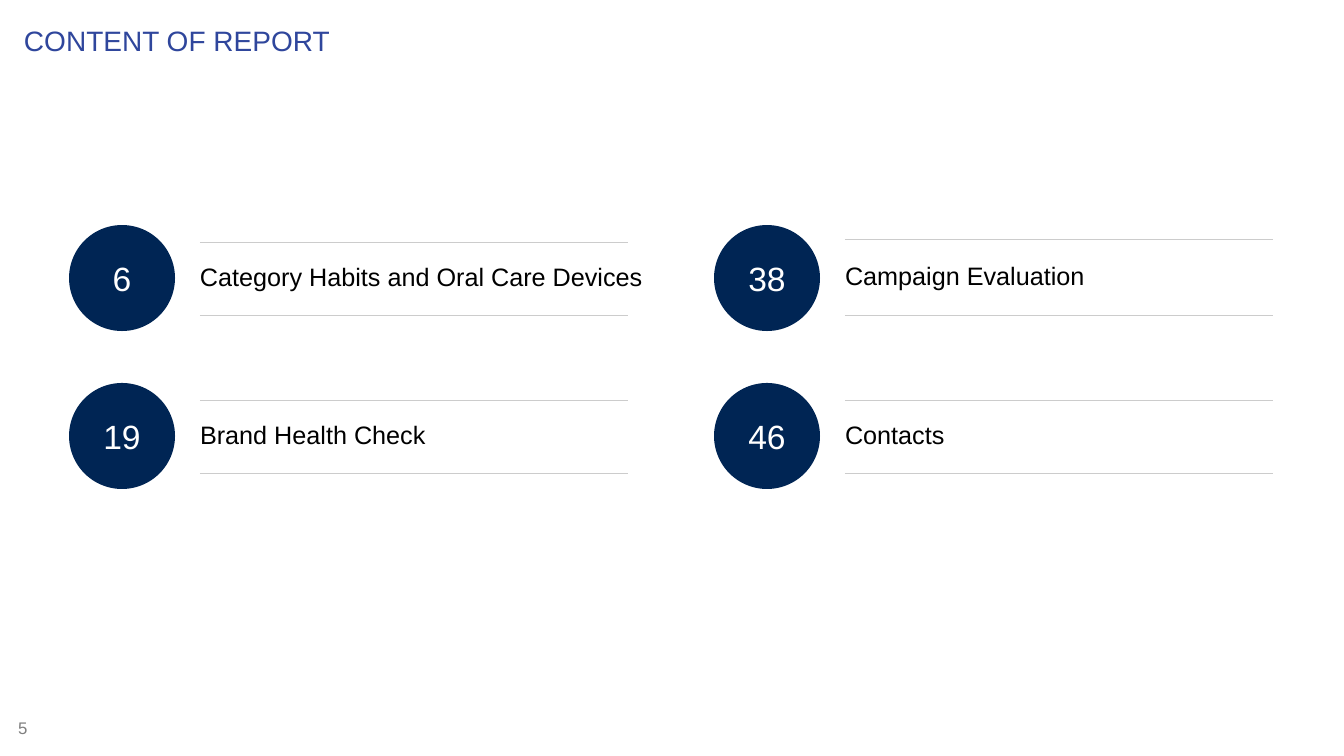
from lxml import etree
from pptx import Presentation
from pptx import util as u
from pptx.dml.color import RGBColor
from pptx.enum import shapes, text
from pptx.oxml.ns import qn


def px(length):
    return u.Inches(length / 100.8)


def color(hex_code):
    return RGBColor.from_string(hex_code)


class ReportSlide:
    """Draws the elements of a report slide in one shared style."""

    FONT = "Arial"
    NAVY, BLUE, GREY, RULE = "002554", "2F469C", "808080", "CCCCCC"
    BLACK, WHITE = "000000", "FFFFFF"

    def __init__(self, deck):
        self.slide = deck.slides.add_slide(deck.slide_layouts[6])

    def set_words(self, frame, words, size, hex_code, align=text.PP_ALIGN.LEFT):
        frame.word_wrap = True
        frame.vertical_anchor = text.MSO_ANCHOR.MIDDLE
        paragraph = frame.paragraphs[0]
        paragraph.alignment = align
        run = paragraph.add_run()
        run.text = words
        run.font.name = self.FONT
        run.font.size = u.Pt(size)
        run.font.color.rgb = color(hex_code)
        return paragraph

    def label(self, parent, box, words, size, hex_code, inset=(10, 5), spacing=1.0):
        frame = parent.shapes.add_textbox(*map(px, box)).text_frame
        frame.margin_left = frame.margin_right = px(inset[0])
        frame.margin_top = frame.margin_bottom = px(inset[1])
        self.set_words(frame, words, size, hex_code).line_spacing = spacing

    def badge(self, parent, left, top, diameter, number):
        circle = parent.shapes.add_shape(
            shapes.MSO_SHAPE.OVAL, *map(px, (left, top, diameter, diameter)))
        circle.shadow.inherit = False
        circle.fill.solid()
        circle.fill.fore_color.rgb = color(self.NAVY)
        circle.line.fill.background()
        self.set_words(circle.text_frame, number, 24, self.WHITE, text.PP_ALIGN.CENTER)

    def rule(self, parent, left, top, width):
        line = parent.shapes.add_connector(
            shapes.MSO_CONNECTOR.STRAIGHT, *map(px, (left, top, left + width, top)))
        line.line.color.rgb = color(self.RULE)
        line.line.width = u.Pt(0.5)
        etree.SubElement(line._element.spPr, qn("a:effectLst"))

    def entry(self, left, top, number, heading, label_width=428, rule_offset=17, label_offset=39):
        group = self.slide.shapes.add_group_shape()
        self.badge(group, left, top, 106, number)
        label_left = left + 131
        self.label(group, (label_left, top + label_offset, label_width, 28),
                   heading, 18, self.BLACK, inset=(0, 0), spacing=0.9)
        for offset in (rule_offset, 90):
            self.rule(group, label_left, top + offset, 428)


def main():
    deck = Presentation()
    deck.slide_width, deck.slide_height = px(1344), px(756)
    report = ReportSlide(deck)
    report.label(report.slide, (5, 708, 313, 40), "5", 12, report.GREY, inset=(13, 7))
    report.label(report.slide, (14, 14, 1315, 53), "CONTENT OF REPORT", 20, report.BLUE)

    left_column, right_column = 69, 69 + 645
    first_row, second_row = 225, 225 + 158
    report.entry(left_column, first_row, "6", "Category Habits and Oral Care Devices",
                 label_width=457)
    report.entry(left_column, second_row, "19", "Brand Health Check")
    report.entry(right_column, second_row, "46", "Contacts")
    report.entry(right_column, first_row, "38", "Campaign Evaluation",
                 rule_offset=14, label_offset=38)
    deck.save("out.pptx")


if __name__ == "__main__":
    main()
